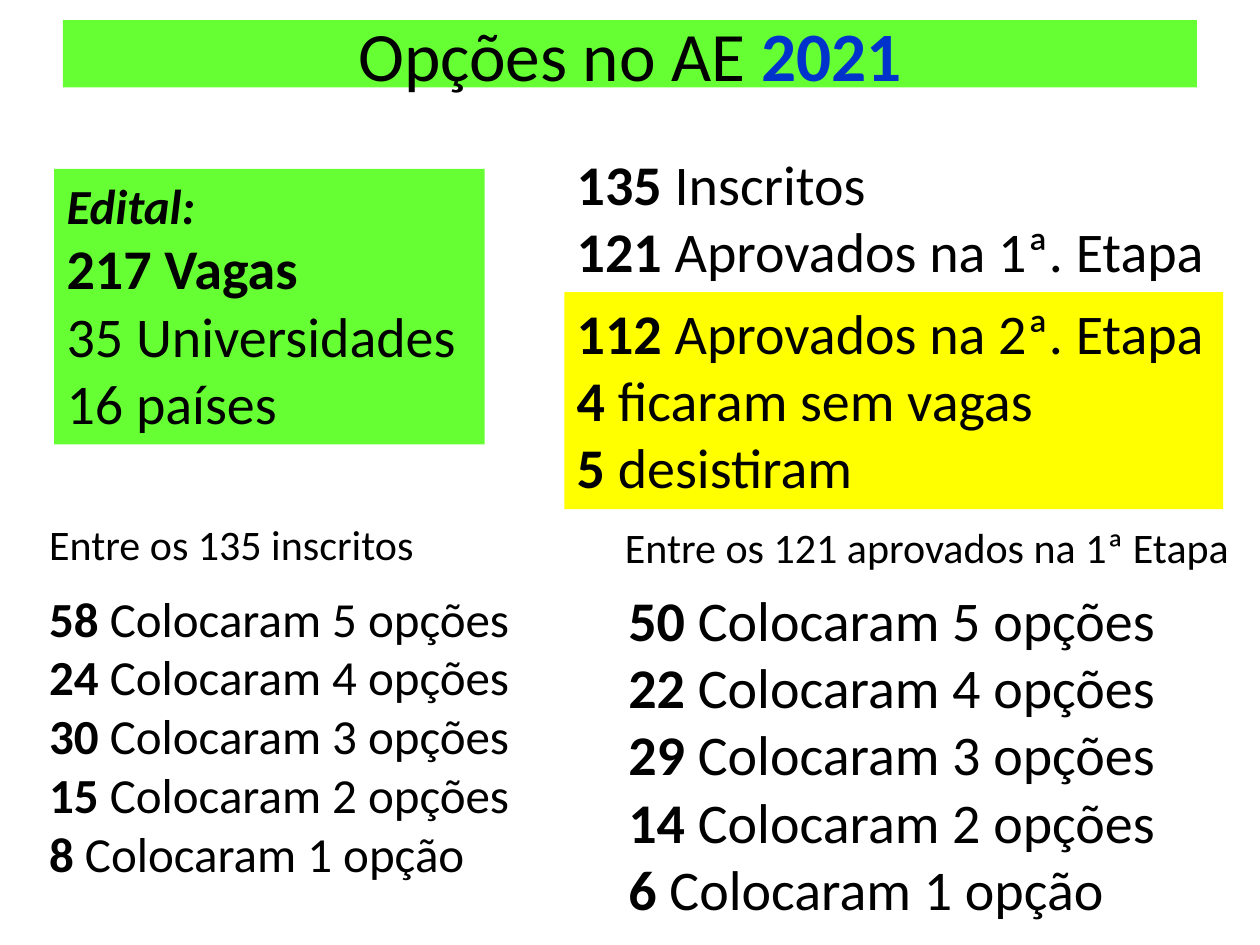
from pptx import Presentation
from pptx.util import Pt
from pptx.dml.color import RGBColor as Rgb
from pptx.enum.text import PP_ALIGN as Align, MSO_ANCHOR as Anchor

HUE = {"green": "66FF33", "yellow": "FFFF00", "blue": "0033CC", "black": "000000"}
BOLD = {"bold": True}
ENDS = ["5 opções", "4 opções", "3 opções", "2 opções", "1 opção"]


def pairs(rows):
    return [[(num, BOLD), (" " + word, {})] for num, word in rows]


def picks(nums):
    return pairs([(num, "Colocaram " + end) for num, end in zip(nums, ENDS)])


TITLE = [[("Opções no AE ", {}), ("2021", {"bold": True, "hue": "blue"})]]
CALL = [
    [("Edital:", {"bold": True, "italic": True, "size": 28})],
    [("217 Vagas", BOLD)],
    [("35 Universidades", {})],
    [("16 países", {})],
]
FIRST = pairs([("135", "Inscritos"), ("121", "Aprovados na 1ª. Etapa")])
NEXT = pairs([
    ("112", "Aprovados na 2ª. Etapa"),
    ("4", "ficaram sem vagas"),
    ("5", "desistiram"),
])

BOXES = [
    ((31, 96.5, 246, 157.5), "green", 32, CALL),
    ((322.5, 82, 376.5, 85), None, 32, FIRST),
    ((322.5, 167, 376.5, 124), "yellow", 32, NEXT),
    ((21, 332.5, 281, 177), None, 28, picks(["58", "24", "30", "15", "8"])),
    ((21, 292.5, 224.5, 36), None, 24, [[("Entre os 135 inscritos", {})]]),
    ((352, 331, 318, 201), None, 32, picks(["50", "22", "29", "14", "6"])),
    ((350, 294.5, 363, 36), None, 24, [[("Entre os 121 aprovados na 1ª Etapa", {})]]),
]


def add_box(slide, area, fill, size, lines, wrap=False):
    box = slide.shapes.add_textbox(*map(Pt, area))
    if fill:
        box.fill.solid()
        box.fill.fore_color.rgb = Rgb.from_string(HUE[fill])
    frame = box.text_frame
    frame.word_wrap = wrap
    for i, line in enumerate(lines):
        para = frame.paragraphs[0] if i == 0 else frame.add_paragraph()
        for text, style in line:
            run = para.add_run()
            run.text = text
            look = {"name": "Calibri", "size": size, "hue": "black", **style}
            run.font.color.rgb = Rgb.from_string(HUE[look.pop("hue")])
            look["size"] = Pt(look["size"])
            for key, value in look.items():
                setattr(run.font, key, value)
    return frame


deck = Presentation()
deck.slide_width, deck.slide_height = Pt(720), Pt(540)
slide = deck.slides.add_slide(deck.slide_layouts[6])

title = add_box(slide, (36, 11.5, 648, 38.5), "green", 39.6, TITLE, True)
title.vertical_anchor = Anchor.MIDDLE
title.paragraphs[0].alignment = Align.CENTER
for box in BOXES:
    add_box(slide, *box)

deck.save("out.pptx")
